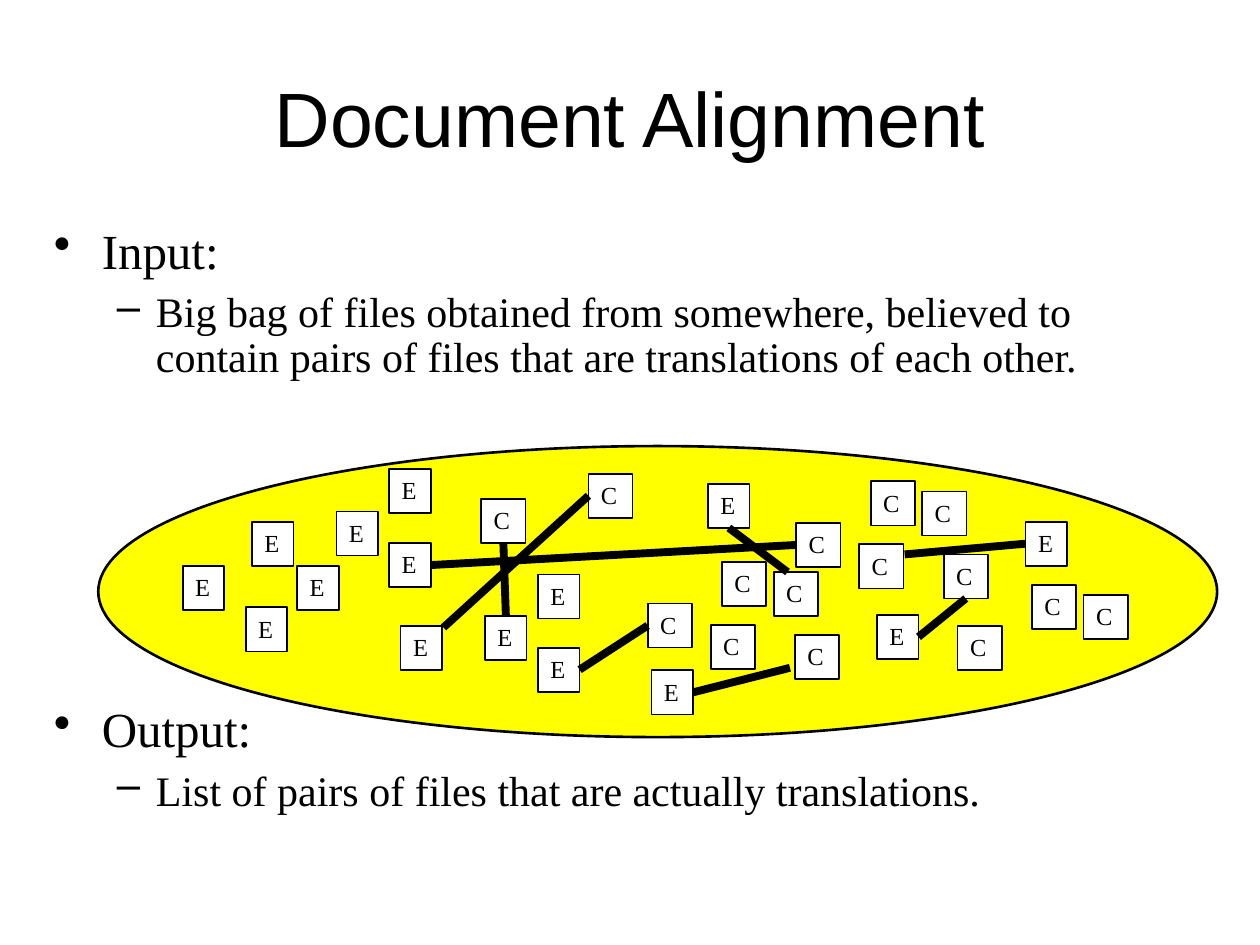
from lxml.etree import SubElement
from pptx import Presentation
from pptx.dml.color import RGBColor
from pptx.enum.shapes import MSO_CONNECTOR, MSO_SHAPE
from pptx.enum.text import MSO_ANCHOR, MSO_AUTO_SIZE, PP_ALIGN
from pptx.oxml.ns import qn
from pptx.util import Pt

SCALE = 9144
COLORS = {"ink": "000000", "bag": "FFFF00", "file": "FFFFFF"}
RGB = {name: RGBColor.from_string(value) for name, value in COLORS.items()}


def write(para, text, font, size):
    span = para.add_run()
    span.text = text
    for key, value in {"name": font, "size": Pt(size)}.items():
        setattr(span.font, key, value)
    span.font.color.rgb = RGB["ink"]


def add_outlined(page, kind, bounds, fill, width):
    shape = page.shapes.add_shape(kind, *[v * SCALE for v in bounds])
    shape.shadow.inherit = False
    shape.fill.solid()
    shape.fill.fore_color.rgb = RGB[fill]
    shape.line.color.rgb = RGB["ink"]
    shape.line.width = Pt(width)
    return shape


deck = Presentation()
deck.slide_width = 1000 * SCALE
deck.slide_height = 750 * SCALE
page = deck.slides.add_slide(deck.slide_layouts[6])

add_outlined(page, MSO_SHAPE.OVAL, (78, 354, 888, 231), "bag", 1.5)

body = page.shapes.add_textbox(*[v * SCALE for v in (33, 175, 917, 495)])
body.text_frame.word_wrap = True
LEVELS = [
    {"bullet": "•", "size": 28, "margin": 38, "indent": -38},
    {"bullet": "–", "size": 24, "margin": 81, "indent": -31},
]
OUTLINE = [
    (0, 6, "Input:"),
    (1, 6.5, "Big bag of files obtained from somewhere, believed to contain "
             "pairs of files that are translations of each other."),
    (0, 185, "Output:"),
    (1, 6.5, "List of pairs of files that are actually translations."),
]
for index, (level, gap, text) in enumerate(OUTLINE):
    para = body.text_frame.add_paragraph() if index else body.text_frame.paragraphs[0]
    style = LEVELS[level]
    for key, value in {"level": level, "line_spacing": 0.9, "space_before": Pt(gap)}.items():
        setattr(para, key, value)
    properties = para._p.get_or_add_pPr()
    properties.set("marL", str(style["margin"] * SCALE))
    properties.set("indent", str(style["indent"] * SCALE))
    SubElement(properties, qn("a:buChar")).set("char", style["bullet"])
    write(para, text, "Times New Roman", style["size"])

title = page.shapes.add_textbox(*[v * SCALE for v in (50, 30, 900, 125)])
for key, value in {"word_wrap": True, "vertical_anchor": MSO_ANCHOR.MIDDLE}.items():
    setattr(title.text_frame, key, value)
title.text_frame.paragraphs[0].alignment = PP_ALIGN.CENTER
write(title.text_frame.paragraphs[0], "Document Alignment", "Arial", 44)

FILE_WIDTHS = {"E": 33, "C": 35}
FILE_SPOTS = {
    "E": [
        (696, 488), (267, 406), (200, 414), (309, 372), (309, 431), (562, 384),
        (385, 489), (318, 497), (427, 456), (427, 514), (145, 449), (195, 482),
        (517, 532), (236, 449), (814, 414),
    ],
    "C": [
        (691, 382), (632, 415), (682, 432), (732, 390), (749, 440), (573, 446),
        (514, 479), (564, 496), (614, 454), (631, 504), (819, 464), (760, 497),
        (382, 396), (860, 472), (467, 376),
    ],
}
files = {}
for letter, spots in FILE_SPOTS.items():
    for spot in spots:
        box = add_outlined(page, MSO_SHAPE.RECTANGLE, (*spot, FILE_WIDTHS[letter], 35), "file", 1)
        for key, value in {
            "word_wrap": False,
            "auto_size": MSO_AUTO_SIZE.SHAPE_TO_FIT_TEXT,
            "vertical_anchor": MSO_ANCHOR.TOP,
        }.items():
            setattr(box.text_frame, key, value)
        para = box.text_frame.paragraphs[0]
        para.alignment = PP_ALIGN.LEFT
        write(para, letter, "Times New Roman", 14)
        files[spot] = box

TOP, LEFT, BOTTOM, RIGHT = range(4)
PAIRS = [
    ((398, 430), (403, 490), ((382, 396), BOTTOM), ((385, 489), TOP)),
    ((459, 533), (516, 498), ((427, 514), RIGHT), ((514, 479), LEFT)),
    ((467, 398), (352, 498), ((467, 376), LEFT), None),
    ((340, 446), (632, 430), ((309, 431), RIGHT), ((632, 415), LEFT)),
    ((582, 419), (625, 454), ((562, 384), BOTTOM), None),
    ((549, 554), (627, 530), ((517, 532), RIGHT), None),
    ((729, 503), (768, 475), ((696, 488), RIGHT), ((749, 440), BOTTOM)),
    ((814, 427), (718, 440), ((814, 414), LEFT), None),
]
for start, end, source, target in PAIRS:
    link = page.shapes.add_connector(MSO_CONNECTOR.STRAIGHT, *[v * SCALE for v in start + end])
    link.line.color.rgb = RGB["ink"]
    link.line.width = Pt(4.5)
    SubElement(link._element.spPr, qn("a:effectLst"))
    for connect, joint in ((link.begin_connect, source), (link.end_connect, target)):
        if joint:
            spot, side = joint
            connect(files[spot], side)

deck.save("out.pptx")
